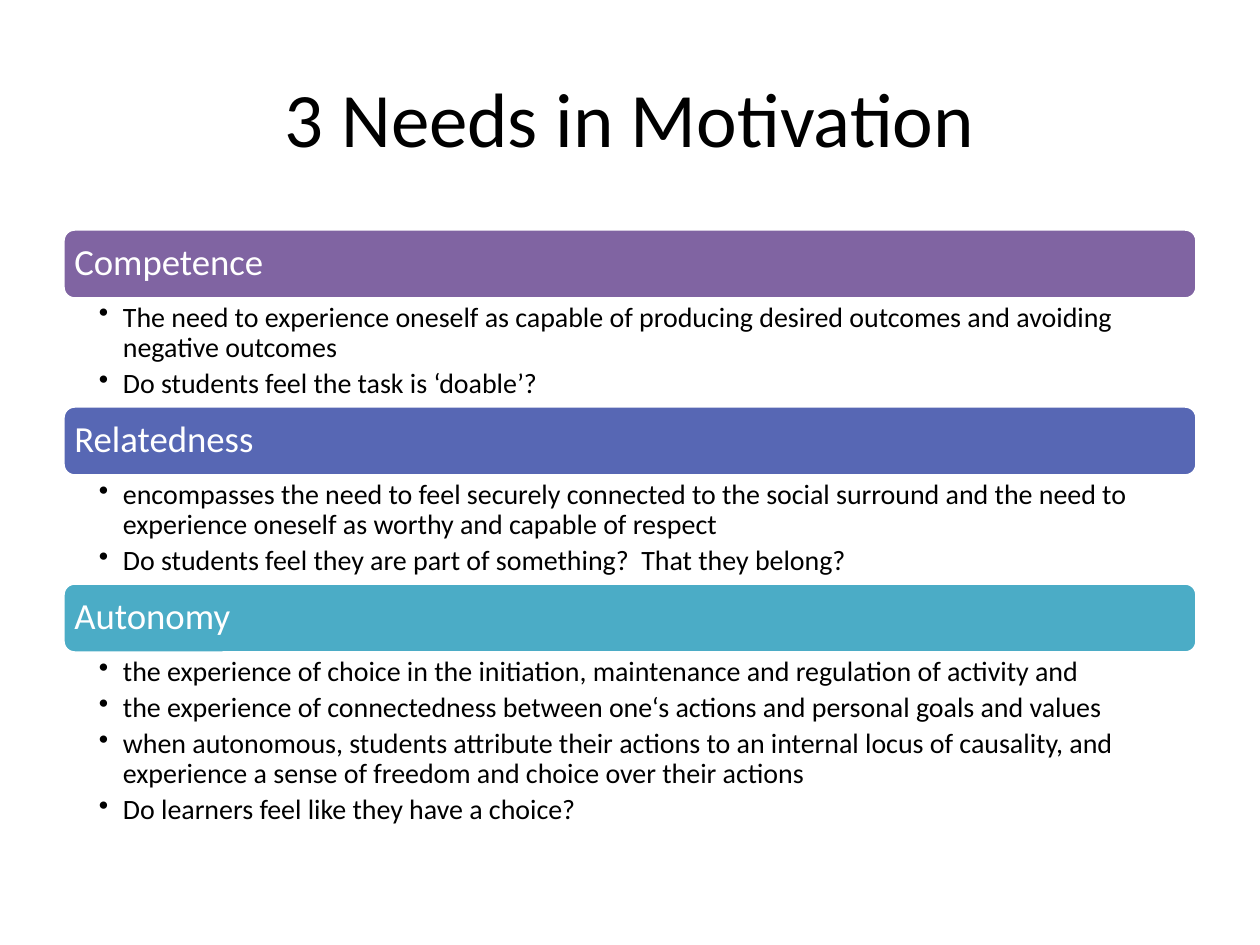
from dataclasses import dataclass

from lxml.etree import SubElement
from pptx import Presentation
from pptx.dml.color import RGBColor as RGB
from pptx.enum.shapes import MSO_SHAPE as Shape
from pptx.enum.text import MSO_ANCHOR as Anchor, PP_ALIGN as Align
from pptx.oxml.ns import qn
from pptx.util import Emu, Pt

SCALE = 914400 / 126
LEFT, WIDTH, TOP, BAR = 63, 1134, 229, 70

NEEDS = [
    ("Competence", "8064A2", 107, [
        "The need to experience oneself as capable of producing desired "
        "outcomes and avoiding negative outcomes",
        "Do students feel the task is ‘doable’?",
    ]),
    ("Relatedness", "5767B4", 107, [
        "encompasses the need to feel securely connected to the social "
        "surround and the need to experience oneself as worthy and capable "
        "of respect",
        "Do students feel they are part of something?  That they belong?",
    ]),
    ("Autonomy", "4BACC6", 183, [
        "the experience of choice in the initiation, maintenance and "
        "regulation of activity and",
        "the experience of connectedness between one‘s actions and personal "
        "goals and values",
        "when autonomous, students attribute their actions to an internal "
        "locus of causality, and experience a sense of freedom and choice "
        "over their actions",
        "Do learners feel like they have a choice?",
    ]),
]


@dataclass(frozen=True)
class Theme:
    font: str = "Calibri"
    ink: str = "000000"
    paper: str = "FFFFFF"
    title: int = 44
    head: int = 21
    body: int = 16
    edge: int = 2
    lead: float = 0.9
    gap: float = 3.4


def px(n):
    return Emu(round(n * SCALE))


class Deck:
    def __init__(self, theme):
        self.theme = theme
        self.prs = Presentation()
        self.prs.slide_width, self.prs.slide_height = px(1260), px(945)
        self.slide = self.prs.slides.add_slide(self.prs.slide_layouts[5])

    def frame(self, shape, anchor, pads):
        """Set wrap, anchor and insets (left, top, right, bottom)."""
        tf = shape.text_frame
        tf.word_wrap, tf.vertical_anchor = True, anchor
        (tf.margin_left, tf.margin_top,
         tf.margin_right, tf.margin_bottom) = map(px, pads)
        return tf

    def run(self, para, text, size, color):
        run = para.add_run()
        run.text = text
        font = run.font
        font.name, font.size = self.theme.font, Pt(size)
        font.color.rgb = RGB.from_string(color)

    def title(self, text, x, y, w, h):
        shape = self.slide.shapes.title
        shape.left, shape.top, shape.width, shape.height = map(px, (x, y, w, h))
        para = self.frame(shape, Anchor.MIDDLE, (13, 6, 13, 6)).paragraphs[0]
        para.alignment = Align.CENTER
        self.run(para, text, self.theme.title, self.theme.ink)

    def bar(self, text, color, x, y, w, h):
        shape = self.slide.shapes.add_shape(
            Shape.ROUNDED_RECTANGLE, *map(px, (x, y, w, h)))
        shape.shadow.inherit = False
        shape.fill.solid()
        shape.fill.fore_color.rgb = RGB.from_string(color)
        shape.line.color.rgb = RGB.from_string(self.theme.paper)
        shape.line.width = Pt(self.theme.edge)
        para = self.frame(shape, Anchor.MIDDLE, (8, 8, 8, 8)).paragraphs[0]
        para.alignment = Align.LEFT
        para.line_spacing = self.theme.lead
        self.run(para, text, self.theme.head, self.theme.paper)

    def points(self, items, x, y, w, h):
        box = self.slide.shapes.add_textbox(*map(px, (x, y, w, h)))
        tf = self.frame(box, Anchor.TOP, (36, 4, 20, 4))
        for i, item in enumerate(items):
            para = tf.add_paragraph() if i else tf.paragraphs[0]
            para.level = 1
            para.line_spacing = self.theme.lead
            para.space_after = Pt(self.theme.gap)
            self.bullet(para)
            self.run(para, item, self.theme.body, self.theme.ink)

    def bullet(self, para, hang=24):
        props = para._p.get_or_add_pPr()
        props.set("marL", str(px(hang)))
        props.set("indent", str(-px(hang)))
        SubElement(props, qn("a:buChar")).set("char", "•")


def main():
    deck = Deck(Theme())
    deck.title("3 Needs in Motivation", LEFT, 38, WIDTH, 157)
    y = TOP
    for name, color, depth, items in NEEDS:
        deck.bar(name, color, LEFT, y, WIDTH, BAR)
        deck.points(items, LEFT, y + BAR, WIDTH, depth)
        y += BAR + depth
    deck.prs.save("out.pptx")


if __name__ == "__main__":
    main()
